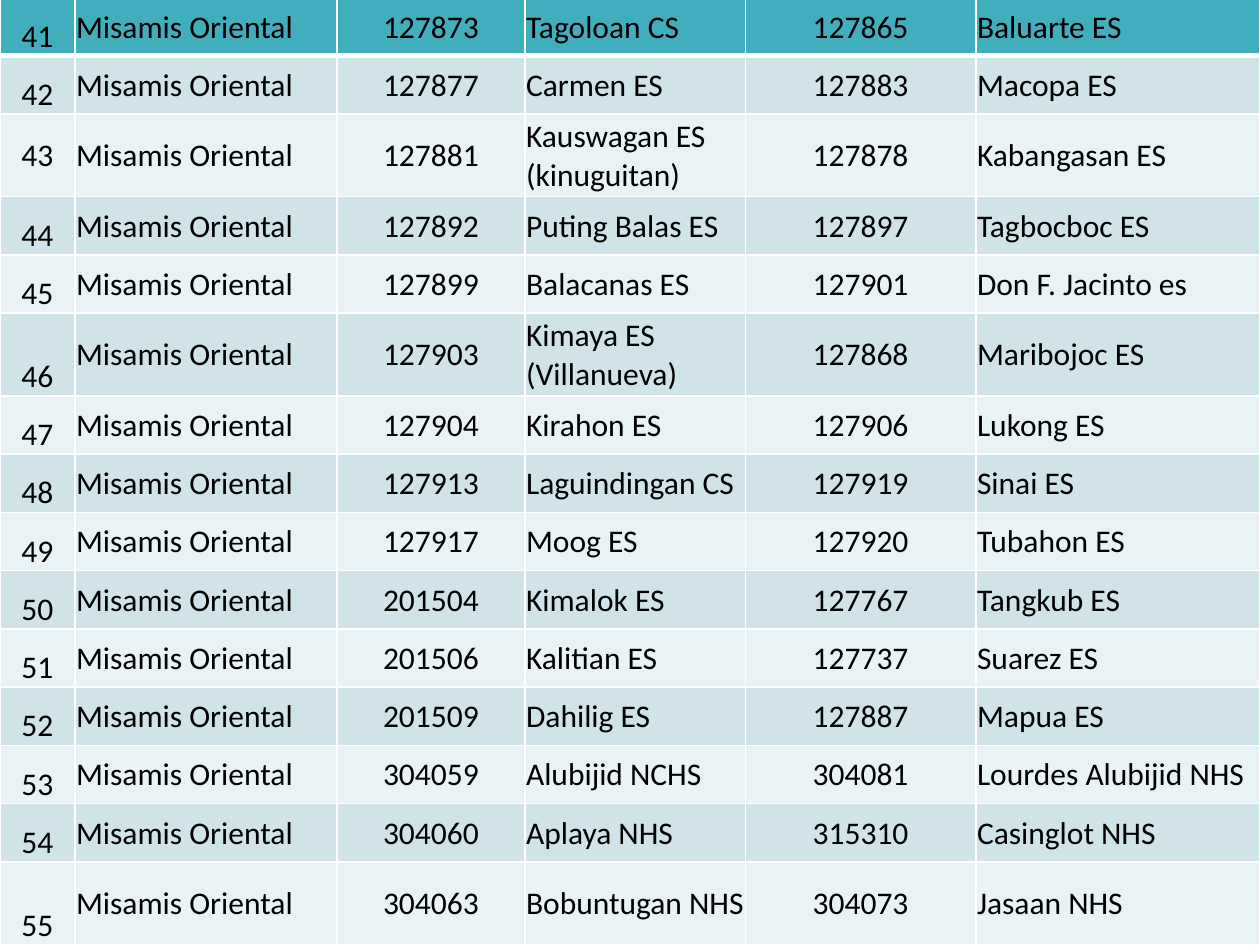
from pptx import Presentation
from pptx.dml.color import RGBColor
from pptx.enum.text import MSO_ANCHOR, PP_ALIGN
from pptx.oxml.ns import qn
from pptx.util import Pt
from lxml import etree

LEFT, CENTER = PP_ALIGN.LEFT, PP_ALIGN.CENTER
MIDDLE, BOTTOM = MSO_ANCHOR.MIDDLE, MSO_ANCHOR.BOTTOM

COLORS = {
    "background": "000000",
    "text": "000000",
    "border": "FFFFFF",
    "header": "41AEBD",
    "dark_band": "CFE3E8",
    "light_band": "E9F2F4",
}

PROVINCE = "Misamis Oriental"
FIRST_NUMBER = 41
SCHOOLS = [
    ("127873", "Tagoloan CS", "127865", "Baluarte ES"),
    ("127877", "Carmen ES", "127883", "Macopa ES"),
    ("127881", "Kauswagan ES (kinuguitan)", "127878", "Kabangasan ES"),
    ("127892", "Puting Balas ES", "127897", "Tagbocboc ES"),
    ("127899", "Balacanas ES", "127901", "Don F. Jacinto es"),
    ("127903", "Kimaya ES (Villanueva)", "127868", "Maribojoc ES"),
    ("127904", "Kirahon ES", "127906", "Lukong ES"),
    ("127913", "Laguindingan CS", "127919", "Sinai ES"),
    ("127917", "Moog ES", "127920", "Tubahon ES"),
    ("201504", "Kimalok ES", "127767", "Tangkub ES"),
    ("201506", "Kalitian ES", "127737", "Suarez ES"),
    ("201509", "Dahilig ES", "127887", "Mapua ES"),
    ("304059", "Alubijid NCHS", "304081", "Lourdes Alubijid NHS"),
    ("304060", "Aplaya NHS", "315310", "Casinglot NHS"),
    ("304063", "Bobuntugan NHS", "304073", "Jasaan NHS"),
]
COLUMN_WIDTHS = [42.8, 149.8, 107.4, 126, 131.7, 162.3]
ALIGNMENTS = [CENTER, LEFT, CENTER, LEFT, CENTER, LEFT]
ROW_HEIGHT, TALL_HEIGHT = 33.3, 47.28
TALL_NUMBERS = {43, 46, 55}
CENTERED_NUMBER = 43


def rgb(name):
    return RGBColor.from_string(COLORS[name])


def write(tf, text, font="Calibri", size=18, color="text", align=LEFT):
    p = tf.paragraphs[0]
    p.alignment = align
    r = p.add_run()
    r.text = text
    r.font.name = font
    r.font.size = Pt(size)
    r.font.bold = False
    r.font.color.rgb = rgb(color)


class SlideBuilder:
    inset = 0.7
    thin, thick = 1, 3

    def __init__(self, s):
        self.s = s

    def background(self, color):
        fill = self.s.background.fill
        fill.solid()
        fill.fore_color.rgb = rgb(color)

    def border(self, cell, side, width):
        tc_pr = cell._tc.get_or_add_tcPr()
        ln = etree.SubElement(tc_pr, qn(f"a:ln{side}"), w=str(Pt(width)))
        fill = etree.SubElement(ln, qn("a:solidFill"))
        etree.SubElement(fill, qn("a:srgbClr"), val=COLORS["border"])

    def cell(self, cell, text, fill, align, anchor, top, bottom):
        cell.margin_left = cell.margin_right = cell.margin_top = Pt(self.inset)
        cell.margin_bottom = 0
        cell.vertical_anchor = anchor
        widths = {"L": self.thin, "R": self.thin, "T": top, "B": bottom}
        for side, width in widths.items():
            self.border(cell, side, width)
        cell.fill.solid()
        cell.fill.fore_color.rgb = rgb(fill)
        write(cell.text_frame, text, align=align)

    def table(self, left, top, rows, widths, heights):
        frame = self.s.shapes.add_table(
            len(rows), len(widths), Pt(left), Pt(top), Pt(sum(widths)), Pt(sum(heights)))
        table = frame.table
        for column, width in zip(table.columns, widths):
            column.width = Pt(width)
        for i, (row, height) in enumerate(zip(rows, heights)):
            table.rows[i].height = Pt(height)
            fill = "header" if i == 0 else "dark_band" if i % 2 else "light_band"
            upper = self.thick if i == 1 else self.thin
            lower = self.thick if i == 0 else self.thin
            for j, text in enumerate(row):
                is_low = j == 0 and text != str(CENTERED_NUMBER)
                self.cell(table.cell(i, j), text, fill, ALIGNMENTS[j],
                          BOTTOM if is_low else MIDDLE, upper, lower)


def main():
    prs = Presentation()
    prs.slide_width, prs.slide_height = Pt(720), Pt(540)
    slide = SlideBuilder(prs.slides.add_slide(prs.slide_layouts[6]))
    slide.background("background")
    numbers = range(FIRST_NUMBER, FIRST_NUMBER + len(SCHOOLS))
    rows = [(str(n), PROVINCE, *school) for n, school in zip(numbers, SCHOOLS)]
    heights = [TALL_HEIGHT if n in TALL_NUMBERS else ROW_HEIGHT for n in numbers]
    slide.table(0, -1.4, rows, COLUMN_WIDTHS, heights)
    prs.save("out.pptx")


if __name__ == "__main__":
    main()
